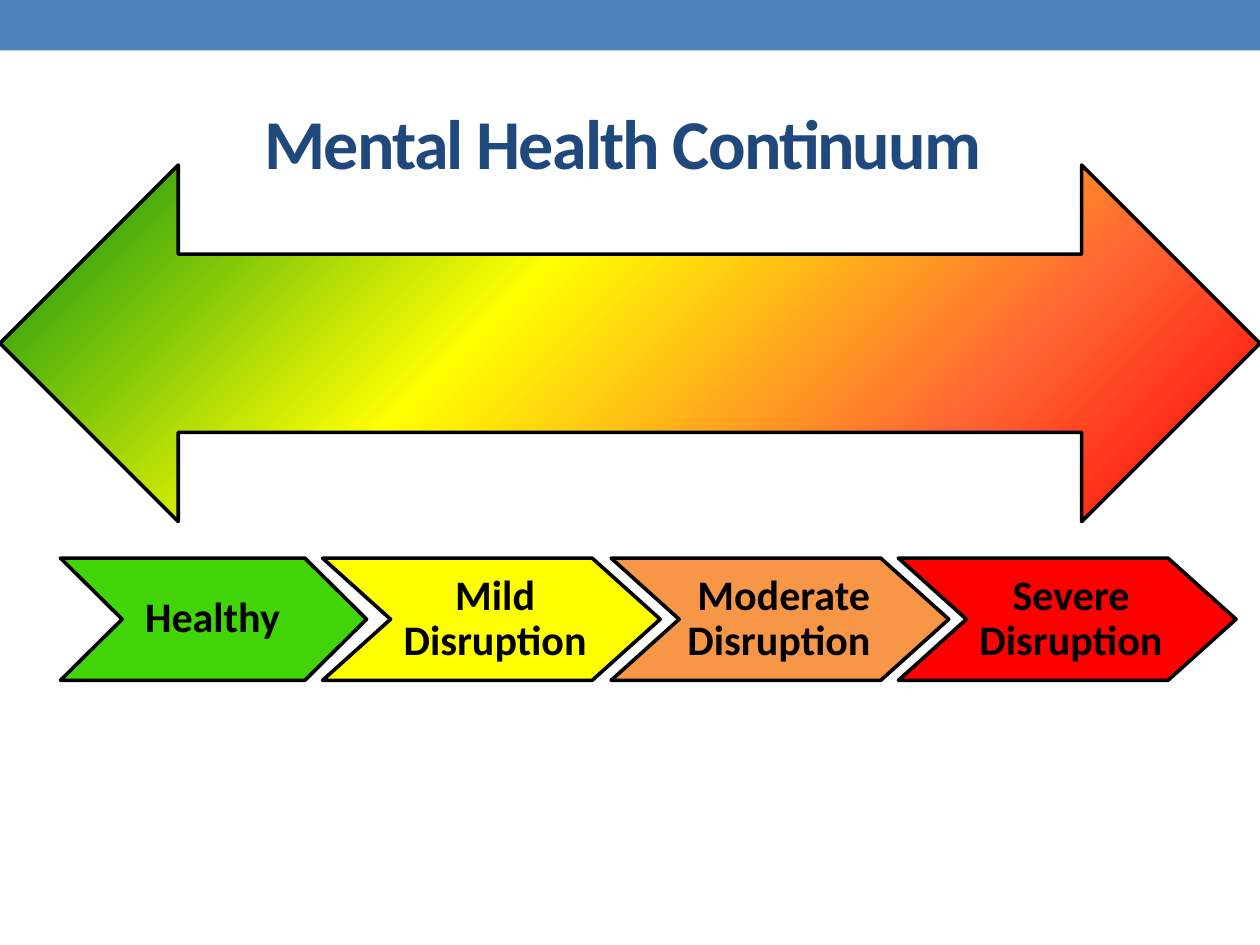
import pptx
import pptx.dml.color
import pptx.enum.shapes
import pptx.enum.text
import pptx.oxml
import pptx.oxml.ns
import pptx.util
from pptx.util import Inches

SHAPES = pptx.enum.shapes.MSO_SHAPE


def color(value):
    return pptx.dml.color.RGBColor.from_string(value)


class SlideBuilder:
    font_name = "Calibri"
    outline = "000000"
    outline_width = pptx.util.Pt(2.08)

    def __init__(self, slide):
        self.slide = slide

    def paint(self, shape, fill, outlined=True):
        shape.shadow.inherit = False
        shape.fill.solid()
        shape.fill.fore_color.rgb = color(fill)
        if outlined:
            shape.line.color.rgb = color(self.outline)
            shape.line.width = self.outline_width
        else:
            shape.line.fill.background()

    def label(self, shape, text, size, text_color):
        """Set one bold, centred paragraph and return its run."""
        frame = shape.text_frame
        frame.word_wrap = True
        frame.vertical_anchor = pptx.enum.text.MSO_ANCHOR.MIDDLE
        frame.text = text
        paragraph = frame.paragraphs[0]
        paragraph.alignment = pptx.enum.text.PP_ALIGN.CENTER
        run = paragraph.runs[0]
        run.font.name = self.font_name
        run.font.size = pptx.util.Pt(size)
        run.font.bold = True
        run.font.color.rgb = color(text_color)
        return run

    def bar(self, left, top, width, height, fill):
        shape = self.slide.shapes.add_shape(
            SHAPES.RECTANGLE, Inches(left), Inches(top), Inches(width), Inches(height))
        self.paint(shape, fill, outlined=False)

    def title(self, text, left, top, width, height):
        shape = self.slide.shapes.add_textbox(
            Inches(left), Inches(top), Inches(width), Inches(height))
        run = self.label(shape, text, 40, "1F497D")
        run.font._element.set("spc", "-100")

    def gradient_arrow(self, left, top, width, height, stops):
        """Draw a double arrow whose gradient spreads from the lower right corner."""
        shape = self.slide.shapes.add_shape(
            SHAPES.LEFT_RIGHT_ARROW,
            Inches(left), Inches(top), Inches(width), Inches(height))
        self.paint(shape, stops[0][1])
        stop_xml = "".join(
            f'<a:gs pos="{percent * 1000}"><a:srgbClr val="{value}"/></a:gs>'
            for percent, value in stops)
        gradient = pptx.oxml.parse_xml(
            f'<a:gradFill {pptx.oxml.ns.nsdecls("a")} rotWithShape="1">'
            f'<a:gsLst>{stop_xml}</a:gsLst>'
            '<a:path path="circle"><a:fillToRect l="100000" t="100000"/></a:path>'
            '</a:gradFill>')
        properties = shape._element.spPr
        solid = properties.find(pptx.oxml.ns.qn("a:solidFill"))
        properties.replace(solid, gradient)

    def chevron(self, text, left, top, width, height, point, fill):
        right, middle, bottom = left + width, top + height / 2, top + height
        corners = [
            (right - point, top), (right, middle), (right - point, bottom),
            (left, bottom), (left + point, middle)]
        builder = self.slide.shapes.build_freeform(Inches(left), Inches(top))
        builder.add_line_segments([(Inches(x), Inches(y)) for x, y in corners])
        shape = builder.convert_to_shape()
        self.paint(shape, fill)
        self.label(shape, text, 24, "000000")
        frame = shape.text_frame
        frame.margin_left, frame.margin_right = Inches(0.58), Inches(0.52)
        frame.margin_top = frame.margin_bottom = Inches(0.03)
        frame.paragraphs[0].line_spacing = 0.9


def main():
    presentation = pptx.Presentation()
    presentation.slide_width = Inches(10)
    presentation.slide_height = Inches(7.5)
    slide = presentation.slides.add_slide(presentation.slide_layouts[6])
    builder = SlideBuilder(slide)

    builder.bar(0, 0, 10, 0.4, "4F81BD")
    builder.title("Mental Health Continuum ", 0.5, 0.58, 9, 1.08)
    builder.gradient_arrow(0, 1.31, 10, 2.83, [
        (0, "FF0000"), (25, "FF6633"), (60, "FFFF00"), (97, "1A9810")])

    stages = [
        ("Healthy ", 0.48, 2.43, 0.49, "41D406"),
        ("Mild Disruption", 2.56, 2.68, 0.54, "FFFF00"),
        ("Moderate Disruption ", 4.85, 2.68, 0.54, "F79646"),
        ("Severe Disruption", 7.13, 2.68, 0.54, "FF0000"),
    ]
    for text, left, width, point, fill in stages:
        builder.chevron(text, left, 4.43, width, 0.97, point, fill)

    presentation.save("out.pptx")


if __name__ == "__main__":
    main()
